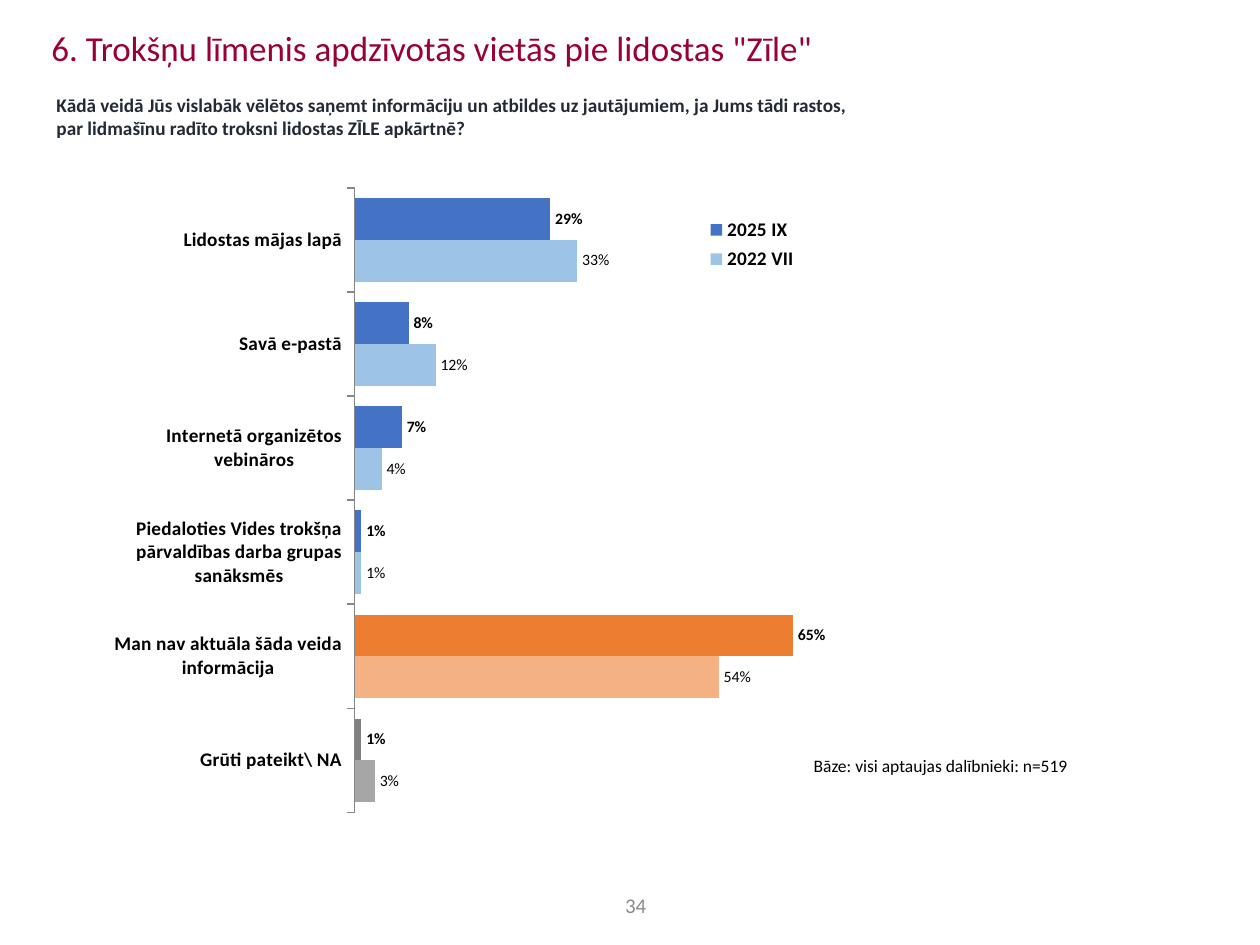
from lxml import etree
from pptx import Presentation
from pptx.chart.data import CategoryChartData
from pptx.dml.color import RGBColor
from pptx.enum.chart import XL_CHART_TYPE, XL_LABEL_POSITION, XL_LEGEND_POSITION, XL_TICK_MARK
from pptx.enum.text import MSO_ANCHOR, PP_ALIGN
from pptx.oxml import parse_xml
from pptx.oxml.ns import nsdecls, qn
from pptx.util import Inches, Pt

MAROON = RGBColor(0x99, 0x00, 0x33)
NAVY = RGBColor(0x22, 0x2A, 0x35)
BLACK = RGBColor(0x00, 0x00, 0x00)
PAGE_GRAY = RGBColor(0x8C, 0x8C, 0x8C)
AXIS_GRAY = RGBColor(0x86, 0x86, 0x86)
BLUE = RGBColor(0x44, 0x72, 0xC4)
LIGHT_BLUE = RGBColor(0x9D, 0xC3, 0xE6)
ORANGE = RGBColor(0xED, 0x7D, 0x31)
LIGHT_ORANGE = RGBColor(0xF4, 0xB1, 0x83)
GRAY = RGBColor(0x80, 0x80, 0x80)
LIGHT_GRAY = RGBColor(0xA6, 0xA6, 0xA6)

CATEGORIES = [
    "Grūti pateikt\\ NA",
    "Man nav aktuāla šāda veida informācija",
    "Piedaloties Vides trokšņa pārvaldības darba grupas sanāksmēs",
    "Internetā organizētos vebināros",
    "Savā e-pastā",
    "Lidostas mājas lapā",
]
# Name, values, main colour, colours of the first two bars, bold labels
SERIES = [
    ("2022 VII", (0.03, 0.54, 0.01, 0.04, 0.12, 0.33),
     LIGHT_BLUE, (LIGHT_GRAY, LIGHT_ORANGE), False),
    ("2025 IX", (0.01, 0.65, 0.01, 0.07, 0.08, 0.29),
     BLUE, (GRAY, ORANGE), True),
]


class SlideBuilder:
    font_name = "Calibri"

    def __init__(self, slide):
        self.slide = slide

    def style_font(self, font, size, color=BLACK, bold=False):
        font.name = self.font_name
        font.size = Pt(size)
        font.bold = bold
        font.color.rgb = color

    def text(self, box, content, size, color, bold=False, wrap=True,
             align=PP_ALIGN.LEFT, anchor=MSO_ANCHOR.TOP):
        shape = self.slide.shapes.add_textbox(*map(Inches, box))
        frame = shape.text_frame
        frame.word_wrap = wrap
        frame.vertical_anchor = anchor
        paragraph = frame.paragraphs[0]
        paragraph.alignment = align
        run = paragraph.add_run()
        run.text = content
        self.style_font(run.font, size, color, bold)

    def set_layout(self, element, position, inner=False):
        """Place a chart part by its fractions of the chart area."""
        for old in element.findall(qn("c:layout")):
            element.remove(old)
        layout = parse_xml(f"<c:layout {nsdecls('c')}><c:manualLayout/></c:layout>")
        manual = layout[0]
        settings = [("layoutTarget", "inner")] if inner else []
        settings += [("xMode", "edge"), ("yMode", "edge")]
        settings += zip("xywh", position)
        for tag, value in settings:
            etree.SubElement(manual, qn(f"c:{tag}")).set("val", str(value))
        element.insert(1 if element.tag == qn("c:legend") else 0, layout)

    def bar_chart(self, box, categories, series_rows, maximum, plot_area, legend_area):
        data = CategoryChartData(number_format="0%")
        data.categories = categories
        for name, values, *_ in series_rows:
            data.add_series(name, values)
        chart = self.slide.shapes.add_chart(
            XL_CHART_TYPE.BAR_CLUSTERED, *map(Inches, box), data).chart
        chart.has_title = False
        self.style_font(chart.font, 18)

        # Axes
        category_axis = chart.category_axis
        category_axis.has_major_gridlines = False
        category_axis.major_tick_mark = XL_TICK_MARK.OUTSIDE
        category_axis.format.line.color.rgb = AXIS_GRAY
        category_axis.format.line.width = Pt(0.75)
        self.style_font(category_axis.tick_labels.font, 11, bold=True)
        value_axis = chart.value_axis
        value_axis.visible = False
        value_axis.has_major_gridlines = False
        value_axis.minimum_scale = 0
        value_axis.maximum_scale = maximum

        # Bars and labels
        plot = chart.plots[0]
        plot.gap_width = 50
        plot.overlap = 0
        plot.vary_by_categories = False
        for series, (_, _, color, point_colors, bold) in zip(plot.series, series_rows):
            series.invert_if_negative = False
            series.format.fill.solid()
            series.format.fill.fore_color.rgb = color
            for index, point_color in enumerate(point_colors):
                fill = series.points[index].format.fill
                fill.solid()
                fill.fore_color.rgb = point_color
            labels = series.data_labels
            labels.show_value = True
            labels.number_format = "0%"
            labels.number_format_is_linked = False
            labels.position = XL_LABEL_POSITION.OUTSIDE_END
            self.style_font(labels.font, 9, bold=bold)

        # Legend and layout
        chart.has_legend = True
        legend = chart.legend
        legend.position = XL_LEGEND_POSITION.RIGHT
        legend.include_in_layout = False
        self.style_font(legend.font, 11, bold=True)
        plot_element = chart.element.find(f".//{qn('c:plotArea')}")
        legend_element = chart.element.find(f".//{qn('c:legend')}")
        self.set_layout(plot_element, plot_area, inner=True)
        self.set_layout(legend_element, legend_area)


def main():
    presentation = Presentation()
    presentation.slide_width = Inches(10)
    presentation.slide_height = Inches(7.5)
    slide = presentation.slides.add_slide(presentation.slide_layouts[6])
    builder = SlideBuilder(slide)

    # Survey results
    builder.bar_chart((0.77, 1.43, 5.91, 5.11), CATEGORIES, SERIES, 0.7,
                      plot_area=(0.346, 0.012, 0.634, 0.97),
                      legend_area=(0.8, 0.05, 0.16, 0.1))

    # Heading and question
    builder.text((0.31, 0.16, 9.37, 0.49),
                 "6. Trokšņu līmenis apdzīvotās vietās pie lidostas \"Zīle\"",
                 20, MAROON)
    builder.text((0.35, 0.69, 6.63, 0.69),
                 "Kādā veidā Jūs vislabāk vēlētos saņemt informāciju un atbildes uz "
                 "jautājumiem, ja Jums tādi rastos, par lidmašīnu radīto troksni "
                 "lidostas ZĪLE apkārtnē?",
                 11, NAVY, bold=True)

    # Base note and page number
    builder.text((6.36, 5.94, 2.24, 0.27), "Bāze: visi aptaujas dalībnieki: n=519",
                 10, BLACK, wrap=False)
    builder.text((4.77, 7.04, 0.55, 0.28), "34", 12, PAGE_GRAY,
                 align=PP_ALIGN.CENTER, anchor=MSO_ANCHOR.MIDDLE)

    presentation.save("out.pptx")


if __name__ == "__main__":
    main()
